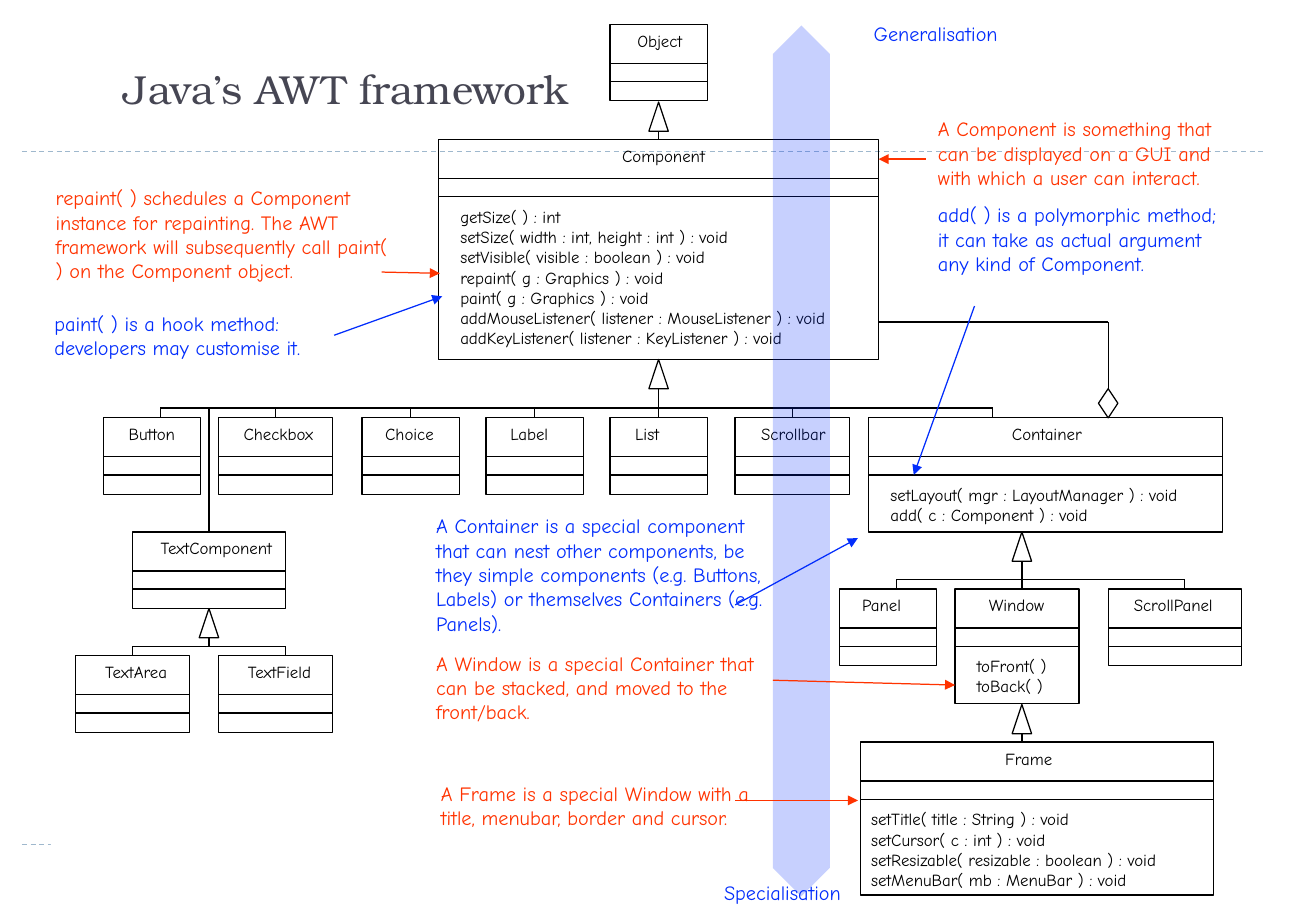
from dataclasses import dataclass

from lxml.etree import SubElement
from pptx import Presentation
from pptx.dml.color import RGBColor
from pptx.enum.dml import MSO_LINE
from pptx.enum.shapes import MSO_CONNECTOR, MSO_SHAPE
from pptx.enum.text import MSO_ANCHOR, MSO_AUTO_SIZE, PP_ALIGN
from pptx.oxml.ns import qn
from pptx.shapes.autoshape import Shape
from pptx.shapes.connector import Connector
from pptx.util import Inches, Pt

COLORS = {"ink": "000000", "white": "FFFFFF", "red": "FF3300",
          "blue": "022DFC", "title": "464653", "rule": "9FB8CD"}
FONT = "Comic Neue"


@dataclass
class Box:
    name: str
    left: float
    top: float
    width: float
    height: float
    span: float
    members: tuple[str, ...] = ()
    inset: float = 0.08


@dataclass
class Wire:
    start: tuple[float, float]
    end: tuple[float, float]
    box: str = ""


@dataclass
class Pointer:
    start: tuple[float, float]
    end: tuple[float, float]
    color: str


@dataclass
class Note:
    text: str
    left: float
    top: float
    width: float
    height: float
    color: str
    center: bool = False


BOXES = [
    Box("Object", 5.02, 0.2, 0.8, 0.63, 0.66),
    Box("Component", 3.61, 1.15, 3.62, 1.81, 3.54, (
        "getSize( ) : int",
        "setSize( width : int, height : int ) : void",
        "setVisible( visible : boolean ) : void",
        "repaint( g : Graphics ) : void",
        "paint( g : Graphics ) : void",
        "addMouseListener( listener : MouseListener ) : void",
        "addKeyListener( listener : KeyListener ) : void")),
    Box("Container", 7.15, 3.44, 2.91, 0.94, 2.77, (
        "setLayout( mgr : LayoutManager ) : void",
        "add( c : Component ) : void")),
    Box("Window", 7.86, 4.85, 1.02, 0.94, 0.85, ("toFront( )", "toBack( )")),
    Box("Frame", 7.08, 6.11, 2.91, 1.26, 2.79, (
        "setTitle( title : String ) : void",
        "setCursor( c : int ) : void",
        "setResizable( resizable : boolean ) : void",
        "setMenuBar( mb : MenuBar ) : void"), -0.01),
    Box("Button", 0.85, 3.44, 0.8, 0.63, 0.64),
    Box("Checkbox", 1.8, 3.44, 0.94, 0.63, 0.82),
    Box("Choice", 2.98, 3.44, 0.8, 0.63, 0.62),
    Box("Label", 4, 3.44, 0.8, 0.63, 0.55),
    Box("List", 5.02, 3.44, 0.8, 0.63, 0.45),
    Box("Scrollbar", 6.05, 3.44, 0.94, 0.63, 0.8),
    Box("TextComponent", 1.09, 4.38, 1.26, 0.63, 1.22),
    Box("TextArea", 0.62, 5.4, 0.94, 0.63, 0.84),
    Box("TextField", 1.8, 5.4, 0.94, 0.63, 0.84),
    Box("Panel", 6.91, 4.85, 0.8, 0.63, 0.53),
    Box("ScrollPanel", 9.12, 4.85, 1.1, 0.63, 0.91),
]
STUBS = [(1.32, ""), (2.27, "Checkbox"), (3.38, "Choice"), (4.4, "Label"),
         (5.42, "List"), (6.52, "Scrollbar"), (8.17, "")]
WIRES = [Wire((x, 3.36), (x, 3.44), name) for x, name in STUBS] + [
    Wire((1.32, 3.36), (8.17, 3.36)),
    Wire((5.42, 1.07), (5.42, 1.15), "Component"),
    Wire((5.42, 3.2), (5.42, 3.36)),
    Wire((8.41, 4.62), (8.41, 4.85)),
    Wire((8.41, 6.03), (8.41, 6.11)),
    Wire((1.72, 3.36), (1.72, 4.38), "TextComponent"),
    Wire((1.72, 5.25), (1.72, 5.32)),
    Wire((1.09, 5.32), (2.35, 5.32)),
    Wire((1.09, 5.32), (1.09, 5.4), "TextArea"),
    Wire((2.35, 5.32), (2.35, 5.4)),
    Wire((7.38, 4.77), (9.75, 4.77)),
    Wire((7.38, 4.77), (7.38, 4.85)),
    Wire((9.75, 4.77), (9.75, 4.85)),
    Wire((9.12, 3.2), (9.12, 2.65)),
    Wire((9.12, 2.65), (7.23, 2.65)),
]
HEADS = [(5.42, 0.84), (5.42, 2.96), (8.41, 4.38), (8.41, 5.8), (1.72, 5.01)]
POINTERS = [
    Pointer((7.62, 1.31), (7.23, 1.31), "red"),
    Pointer((6.36, 5.6), (7.86, 5.64), "red"),
    Pointer((6.05, 6.59), (7.06, 6.59), "red"),
    Pointer((3.14, 2.24), (3.62, 2.25), "red"),
    Pointer((2.75, 2.76), (3.64, 2.44), "blue"),
    Pointer((8.02, 2.52), (7.52, 3.91), "blue"),
    Pointer((6.05, 4.98), (7.06, 4.43), "blue"),
]
NOTES = [
    Note("A Component is something that can be displayed on a GUI and with "
         "which a user can interact.", 7.62, 0.91, 2.68, 0.71, "red"),
    Note("A Window is a special Container that can be stacked, and moved to "
         "the front/back.", 3.49, 5.31, 2.99, 0.71, "red"),
    Note("A Frame is a special Window with a title, menubar, border and "
         "cursor.", 3.53, 6.38, 2.76, 0.71, "red"),
    Note("repaint( ) schedules a Component instance for repainting. The AWT "
         "framework will subsequently call paint( ) on the Component object.",
         0.36, 1.48, 2.94, 0.91, "red"),
    Note("A Container is a special component that can nest other components, "
         "be they simple components (e.g. Buttons, Labels) or themselves "
         "Containers (e.g. Panels).", 3.49, 4.18, 2.99, 1.11, "blue"),
    Note("paint( ) is a hook method: developers may customise it.",
         0.35, 2.51, 2.48, 0.51, "blue"),
    Note("add( ) is a polymorphic method; it can take as actual argument any "
         "kind of Component.", 7.62, 1.62, 2.52, 0.91, "blue"),
    Note("Generalisation", 6.6, 0.13, 2.2, 0.3, "blue", True),
    Note("Specialisation", 5.34, 7.2, 2.2, 0.3, "blue", True),
]

deck = Presentation()
deck.slide_width, deck.slide_height = Inches(10.83), Inches(7.5)
slide = deck.slides.add_slide(deck.slide_layouts[5])
shapes = slide.shapes


def tint(name: str) -> RGBColor:
    return RGBColor.from_string(COLORS[name])


def add_line(start: tuple[float, float], end: tuple[float, float],
             color: str = "ink") -> Connector:
    line = shapes.add_connector(MSO_CONNECTOR.STRAIGHT,
                                *map(Inches, (*start, *end)))
    line.line.color.rgb = tint(color)
    line.line.width = Pt(0.75)
    SubElement(line._element.spPr, qn("a:effectLst"))
    return line


def add_form(kind: MSO_SHAPE, left: float, top: float, width: float,
             height: float, fill: str = "", edge: str = "ink") -> Shape:
    form = shapes.add_shape(kind, *map(Inches, (left, top, width, height)))
    form.shadow.inherit = False
    if fill:
        form.fill.solid()
        form.fill.fore_color.rgb = tint(fill)
    else:
        form.fill.background()
    if edge:
        form.line.color.rgb = tint(edge)
        form.line.width = Pt(0.75)
    else:
        form.line.fill.background()
    return form


def add_text(lines: tuple[str, ...], left: float, top: float, width: float,
             height: float, size: int, color: str, wrap: bool,
             center: bool) -> None:
    area = shapes.add_textbox(*map(Inches, (left, top, width, height)))
    frame = area.text_frame
    frame.word_wrap = wrap
    frame.auto_size = MSO_AUTO_SIZE.SHAPE_TO_FIT_TEXT
    frame.text = "\n".join(lines)
    for index, para in enumerate(frame.paragraphs):
        mid = center and index == 0
        para.alignment = PP_ALIGN.CENTER if mid else PP_ALIGN.LEFT
        if index == 1:
            para.space_before = Pt(24)
        para.font.name, para.font.size = FONT, Pt(size)
        para.font.color.rgb = tint(color)


def add_box(box: Box) -> Shape:
    height = box.height - 0.01 if box.members else 0.27
    add_text((box.name, *box.members), box.left + box.inset, box.top,
             box.span, height, 10, "ink", False, True)
    form = add_form(MSO_SHAPE.RECTANGLE, box.left, box.top, box.width,
                    box.height)
    for drop in (0.32, 0.47):
        y = box.top + drop
        add_line((box.left, y), (box.left + box.width, y))
    return form


for y in (6.95, 1.25):
    add_line((0.18, y), (10.42, y), "rule").line.dash_style = MSO_LINE.DASH
add_form(MSO_SHAPE.RECTANGLE, 0.42, 6.74, 10, 0.76, "white", "")

forms = {box.name: add_box(box) for box in BOXES}
for wire in WIRES:
    line = add_line(wire.start, wire.end)
    if wire.box:
        line.end_connect(forms[wire.box], 0)
for x, y in HEADS:
    add_form(MSO_SHAPE.ISOSCELES_TRIANGLE, x - 0.08, y, 0.16, 0.24, "white")
add_form(MSO_SHAPE.DIAMOND, 9, 3.24, 0.24, 0.16, "white").rotation = 270

title = shapes.title
title.left, title.top = Inches(0.92), Inches(0.25)
title.width, title.height = Inches(4.41), Inches(0.73)
title.text_frame.text = "Java’s AWT framework"
title.text_frame.word_wrap = True
title.text_frame.auto_size = MSO_AUTO_SIZE.NONE
title.text_frame.vertical_anchor = MSO_ANCHOR.BOTTOM
head = title.text_frame.paragraphs[0]
head.alignment = PP_ALIGN.LEFT
head.font.name, head.font.size = "TeX Gyre Bonum", Pt(24)
head.font.color.rgb = tint("title")

scale = add_form(MSO_SHAPE.UP_DOWN_ARROW, 6.36, 0.21, 0.47, 7.17, "blue", "")
scale.adjustments[0], scale.adjustments[1] = 0.5, 3.04
shade = scale._element.spPr.find(qn("a:solidFill"))[0]
SubElement(shade, qn("a:alpha"), val="22000")

for note in NOTES:
    add_text((note.text,), note.left, note.top, note.width, note.height, 12,
             note.color, True, note.center)
for item in POINTERS:
    line = add_line(item.start, item.end, item.color)
    SubElement(line.line._get_or_add_ln(), qn("a:tailEnd"), type="triangle")

deck.save("out.pptx")
